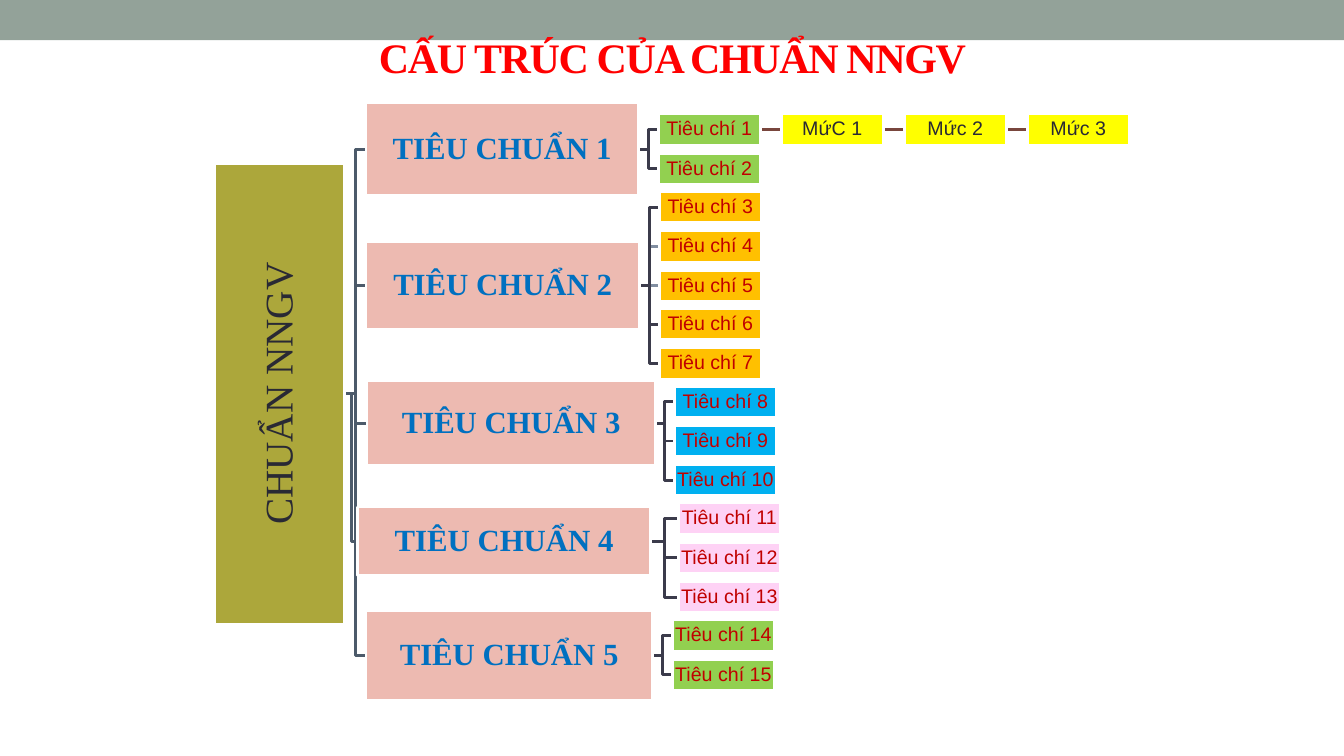
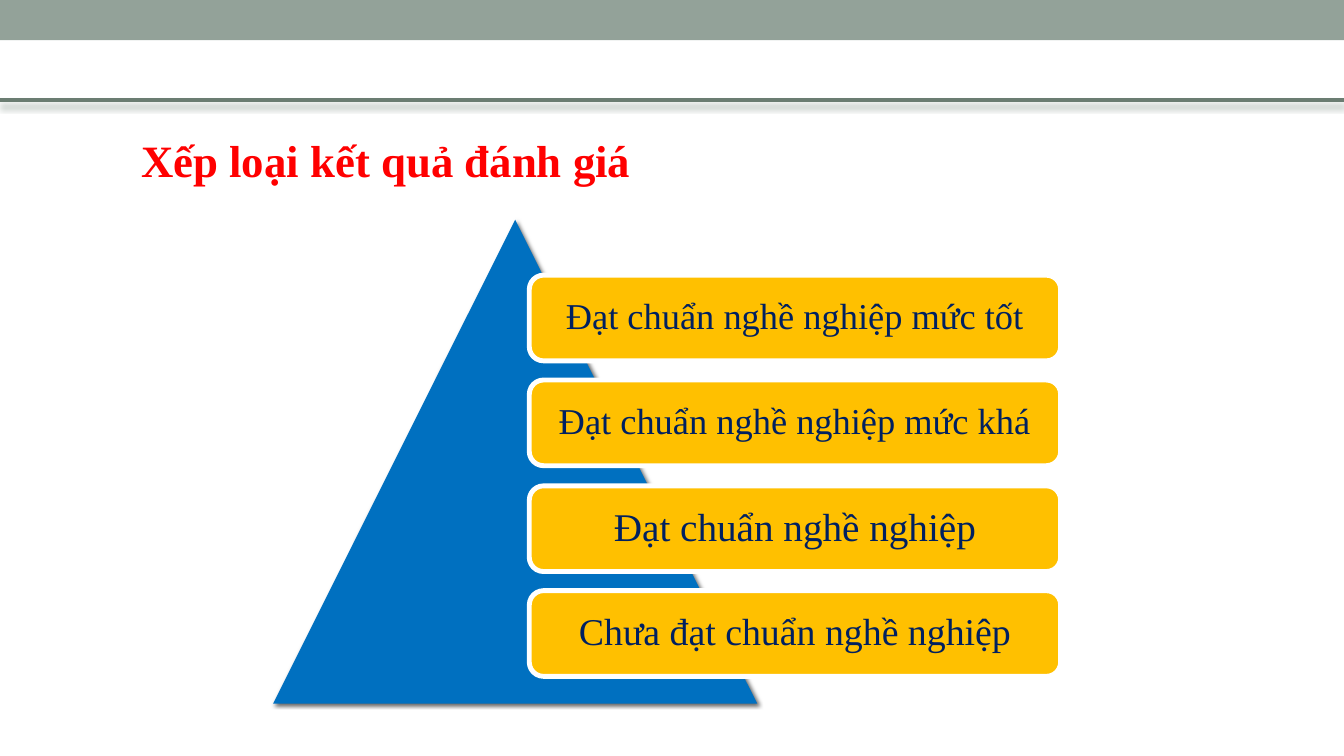
import dataclasses

import lxml.etree
import pptx
import pptx.dml.color
import pptx.enum.shapes
import pptx.enum.text
import pptx.oxml.ns
import pptx.util

EMU_PER_PX = 9144  # 100 px to the inch
SLIDE_W, SLIDE_H = 1333, 750
SHAPES = pptx.enum.shapes.MSO_SHAPE
LINES = pptx.enum.shapes.MSO_CONNECTOR
CENTER = pptx.enum.text.PP_ALIGN.CENTER
LEFT = pptx.enum.text.PP_ALIGN.LEFT
MIDDLE = pptx.enum.text.MSO_ANCHOR.MIDDLE


@dataclasses.dataclass(frozen=True)
class Theme:
    serif: str = "Times New Roman"
    sans: str = "Arial"
    white: str = "FFFFFF"
    band: str = "93A299"
    rule: str = "6B7D72"
    title: str = "FF0000"
    ink: str = "292934"
    root: str = "ACA73B"
    standard: str = "EDBAB1"
    standard_text: str = "0070C0"
    criterion_text: str = "C00000"
    level: str = "FFFF00"
    green: str = "92D050"
    amber: str = "FFC000"
    blue: str = "00B0F0"
    pink: str = "FED2F5"
    pyramid: str = "0070C0"
    card_text: str = "002060"
    trunk_line: str = "4C5A6A"
    branch_line: str = "3B3B4B"
    pale_line: str = "808DA0"
    level_line: str = "79463D"
    tree_line_pt: float = 2.08
    card_line_pt: float = 3.5
    rule_pt: float = 3


THEME = Theme()

# Text styles: font attributes, with the colour kept under "color"
STRUCTURE_TITLE = dict(name=THEME.serif, size=30, bold=True, color=THEME.title)
RATING_TITLE = dict(name=THEME.serif, size=32, bold=True, color=THEME.title)
ROOT_TEXT = dict(name=THEME.serif, size=28, color=THEME.ink)
STANDARD_TEXT = dict(name=THEME.serif, size=22, bold=True, color=THEME.standard_text)
CRITERION_TEXT = dict(name=THEME.sans, size=14, color=THEME.criterion_text)
LEVEL_TEXT = dict(name=THEME.sans, size=14, color=THEME.ink)
CARD_TEXT = dict(name=THEME.serif, size=26, color=THEME.card_text)


@dataclasses.dataclass(frozen=True)
class Box:
    left: int
    top: int
    width: int
    height: int

    @property
    def right(self):
        return self.left + self.width

    @property
    def middle(self):
        return self.top + self.height / 2

    def inner(self, left, top, width, height):
        return Box(self.left + left, self.top + top, width, height)

    def emu(self):
        return [px(n) for n in (self.left, self.top, self.width, self.height)]


def px(length):
    return pptx.util.Emu(round(length * EMU_PER_PX))


def rgb(color):
    return pptx.dml.color.RGBColor.from_string(color)


# Shared drawing helpers
def write(shape, text, style, align=CENTER, spacing=0.9, margin=1, wrap=False):
    frame = shape.text_frame
    layout = dict(word_wrap=wrap, vertical_anchor=MIDDLE, margin_left=px(margin),
                  margin_right=px(margin), margin_top=px(margin),
                  margin_bottom=px(margin))
    for name, value in layout.items():
        setattr(frame, name, value)
    paragraph = frame.paragraphs[0]
    paragraph.alignment = align
    paragraph.line_spacing = spacing
    run = paragraph.add_run()
    run.text = text
    for name, value in style.items():
        if name == "color":
            run.font.color.rgb = rgb(value)
        elif name == "size":
            run.font.size = pptx.util.Pt(value)
        else:
            setattr(run.font, name, value)
    return run


def set_shadow(shape, color=None, alpha=100, blur=0, distance=0, angle=0):
    """Replace the inherited effects by one outer shadow, or by none."""
    qn = pptx.oxml.ns.qn
    properties = shape._element.spPr
    effects = properties.find(qn("a:effectLst"))
    if effects is None:
        effects = lxml.etree.SubElement(properties, qn("a:effectLst"))
    if color:
        outer = lxml.etree.SubElement(
            effects, qn("a:outerShdw"), blurRad=str(blur * 12700),
            dist=str(distance * 12700), dir=str(angle * 60000), rotWithShape="0")
        tint = lxml.etree.SubElement(outer, qn("a:srgbClr"), val=color)
        lxml.etree.SubElement(tint, qn("a:alpha"), val=str(alpha * 1000))


def add_block(slide, box, fill, kind=SHAPES.RECTANGLE, line_pt=0):
    block = slide.shapes.add_shape(kind, *box.emu())
    block.shadow.inherit = False
    block.fill.solid()
    block.fill.fore_color.rgb = rgb(fill)
    if line_pt:
        block.line.color.rgb = rgb(THEME.white)
        block.line.width = pptx.util.Pt(line_pt)
    else:
        block.line.fill.background()
    return block


def add_line(slide, start, end, color, width_pt):
    kind = LINES.STRAIGHT if px(start[1]) == px(end[1]) else LINES.ELBOW
    line = slide.shapes.add_connector(kind, *(px(n) for n in (*start, *end)))
    line.line.color.rgb = rgb(color)
    line.line.width = pptx.util.Pt(width_pt)
    set_shadow(line)
    return line


def add_title(slide, box, text, style, **layout):
    title = slide.shapes.add_textbox(*box.emu())
    return write(title, text, style, spacing=1.0, wrap=True, **layout)


def new_slide(deck):
    slide = deck.slides.add_slide(deck.slide_layouts[6])
    add_block(slide, Box(0, 0, SLIDE_W, 40), THEME.band)
    return slide


# Tree of standards, criteria and levels
# Each standard: its box in the tree, left of its criteria, their count and fill
STANDARDS = [
    ((150, 0, 270, 92), 440, 2, THEME.green),
    ((150, 138, 271, 87), 441, 5, THEME.amber),
    ((151, 276, 286, 84), 456, 3, THEME.blue),
    ((142, 401, 290, 68), 460, 3, THEME.pink),
    ((150, 504, 284, 89), 454, 2, THEME.green),
]
LEVELS = ["MứC 1", "Mức 2", "Mức 3"]
PALE_CRITERIA = (4, 5)


def draw_tree(slide, area):
    root = area.inner(0, 60, 129, 457)
    links, nodes = [], []

    def link(parent, child, color):
        links.append(((parent.right, parent.middle), (child.left, child.middle), color))

    number = 0
    for index, (place, left, count, fill) in enumerate(STANDARDS, 1):
        standard = area.inner(*place)
        link(root, standard, THEME.trunk_line)
        nodes.append((standard, f"TIÊU CHUẨN {index}", THEME.standard, STANDARD_TEXT))
        for _ in range(count):
            criterion = area.inner(left, 11 + round(number * 541 / 14), 101, 31)
            number += 1
            pale = number in PALE_CRITERIA
            link(standard, criterion, THEME.pale_line if pale else THEME.branch_line)
            nodes.append((criterion, f"Tiêu chí {number}", fill, CRITERION_TEXT))

    # Levels follow the first criterion in a row
    previous = area.inner(440, 11, 101, 31)
    for name in LEVELS:
        level = previous.inner(122, 0, 101, 31)
        link(previous, level, THEME.level_line)
        nodes.append((level, name, THEME.level, LEVEL_TEXT))
        previous = level

    # Pale lines go beneath the darker ones, and all lines beneath the nodes
    for start, end, color in sorted(links, key=lambda item: item[2] != THEME.pale_line):
        add_line(slide, start, end, color, THEME.tree_line_pt)
    turn = (root.height - root.width) / 2
    upright = root.inner(-turn, turn, root.height, root.width)
    trunk = add_block(slide, upright, THEME.root, line_pt=THEME.tree_line_pt)
    trunk.rotation = 270
    write(trunk, "CHUẨN NNGV", ROOT_TEXT)
    for box, text, fill, style in nodes:
        node = add_block(slide, box, fill, line_pt=THEME.tree_line_pt)
        write(node, text, style)


# Pyramid with one card for each rating
RATINGS = [
    ("Đạt chuẩn nghề nghiệp mức tốt", 26),
    ("Đạt chuẩn nghề nghiệp mức khá", 26),
    ("Đạt chuẩn nghề nghiệp", 28),
    ("Chưa đạt chuẩn nghề nghiệp", 27),
]


def draw_pyramid(slide, area):
    pyramid = add_block(slide, area.inner(0, 0, 480, 480), THEME.pyramid,
                        SHAPES.ISOSCELES_TRIANGLE)
    set_shadow(pyramid, "000000", alpha=60, blur=3, distance=2, angle=45)
    for index, (rating, size) in enumerate(RATINGS):
        box = area.inner(254, 55 + round(index * 313 / 3), 527, 85)
        card = add_block(slide, box, THEME.amber, SHAPES.ROUNDED_RECTANGLE,
                         THEME.card_line_pt)
        write(card, rating, {**CARD_TEXT, "size": size}, margin=11)


# Slides
def structure_slide(deck):
    slide = new_slide(deck)
    title = add_title(slide, Box(67, 21, 1200, 70), "CẤU TRÚC CỦA CHUẨN NNGV",
                      STRUCTURE_TITLE, margin=5)
    title.font._element.set("spc", "-100")
    draw_tree(slide, Box(213, 102, 906, 593))


def rating_slide(deck):
    slide = new_slide(deck)
    rule = add_line(slide, (0, 99), (SLIDE_W, 99), THEME.rule, THEME.rule_pt)
    set_shadow(rule, "BEC7C2", blur=4, distance=4, angle=90)
    add_title(slide, Box(121, 123, 1101, 71), "Xếp loại kết quả đánh giá",
              RATING_TITLE, align=LEFT, margin=19)
    draw_pyramid(slide, Box(271, 218, 781, 480))


def main():
    deck = pptx.Presentation()
    deck.slide_width, deck.slide_height = px(SLIDE_W), px(SLIDE_H)
    structure_slide(deck)
    rating_slide(deck)
    deck.save("out.pptx")


if __name__ == "__main__":
    main()
